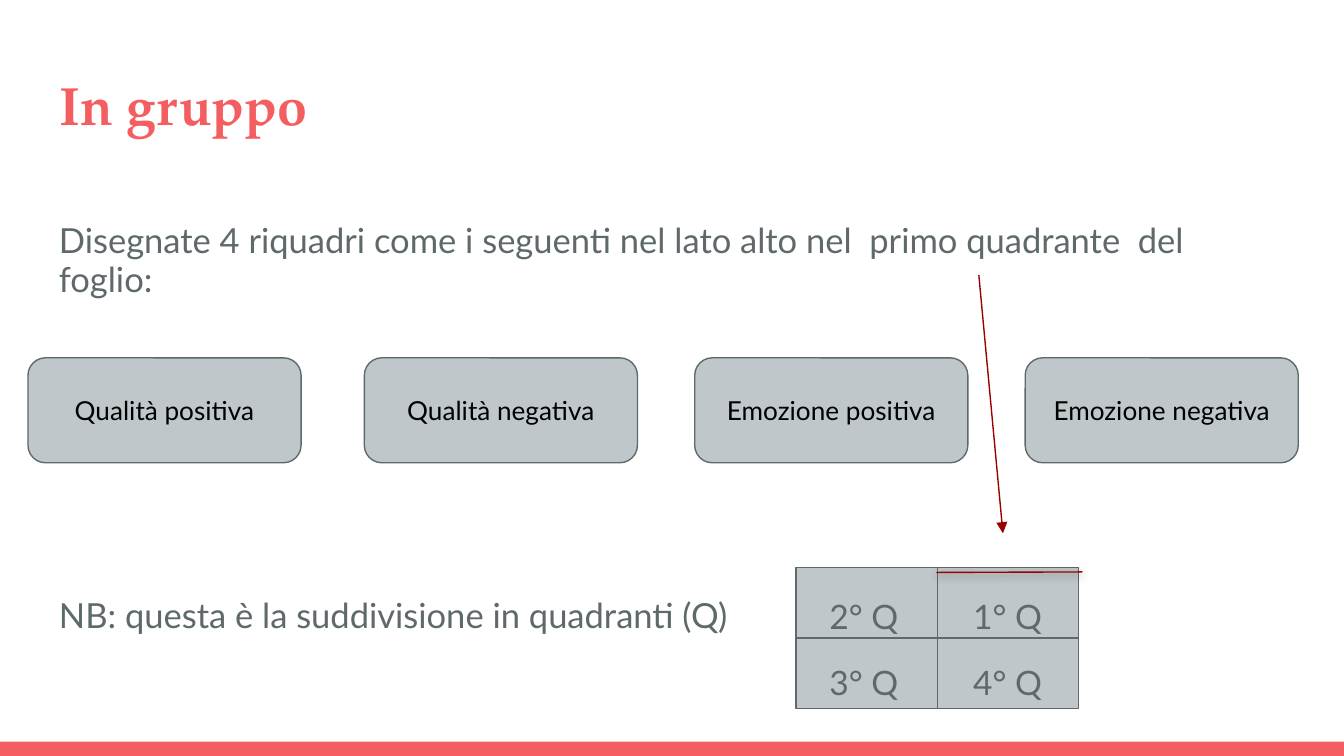
from lxml import etree
from pptx import Presentation
from pptx import util as u
from pptx.dml.color import RGBColor
from pptx.enum import shapes, text
from pptx.oxml.ns import qn

Pt = u.Pt
CORAL = RGBColor(0xF5, 0x5E, 0x61)
SLATE = RGBColor(0x5E, 0x69, 0x6C)
SILVER = RGBColor(0xBF, 0xC7, 0xCA)
DARK_RED = RGBColor(0x99, 0x00, 0x00)
BLACK = RGBColor(0, 0, 0)

TITLE = dict(name="TeX Gyre Pagella", size=Pt(28.8), bold=True)
BODY = dict(name="Lato", size=Pt(18.5))
QUADRANT = dict(name="Lato", size=Pt(18))
LABEL = dict(name="Lato", size=Pt(14))


def place(sp, x, y, w, h):
    sp.left, sp.top, sp.width, sp.height = Pt(x), Pt(y), Pt(w), Pt(h)


def write(sp, content, fmt, color, anchor=text.MSO_ANCHOR.TOP,
          align=text.PP_ALIGN.LEFT, spacing=1.0):
    tf = sp.text_frame
    frame = dict(word_wrap=True, auto_size=text.MSO_AUTO_SIZE.NONE,
                 vertical_anchor=anchor)
    for side in ("left", "top", "right", "bottom"):
        frame["margin_" + side] = Pt(7.2)
    for key, value in frame.items():
        setattr(tf, key, value)
    p = tf.paragraphs[0]
    p.alignment, p.line_spacing = align, spacing
    r = p.add_run()
    r.text = content
    for key, value in fmt.items():
        setattr(r.font, key, value)
    r.font.color.rgb = color


def add_title(s, content):
    sp = s.shapes.title
    place(sp, 24.5, 31, 671, 49)
    write(sp, content, TITLE, CORAL)


def add_text(s, box, content, fmt, spacing=1.0):
    sp = s.shapes.add_textbox(*map(Pt, box))
    write(sp, content, fmt, SLATE, spacing=spacing)


def add_box(s, kind, box, fill, line=None):
    sp = s.shapes.add_shape(kind, *map(Pt, box))
    sp.shadow.inherit = False
    sp.fill.solid()
    sp.fill.fore_color.rgb = fill
    if line is None:
        sp.line.fill.background()
    else:
        sp.line.color.rgb = line
        sp.line.width = Pt(0.75)
    return sp


def add_line(s, ends, color):
    """Add a thin line; return it with its empty effect list."""
    sp = s.shapes.add_connector(shapes.MSO_CONNECTOR.STRAIGHT, *map(Pt, ends))
    sp.line.color.rgb = color
    sp.line.width = Pt(0.75)
    effects = etree.SubElement(sp._element.spPr, qn("a:effectLst"))
    return sp, effects


def add_arrow(s, ends, color):
    sp, _ = add_line(s, ends, color)
    etree.SubElement(sp.line._get_or_add_ln(), qn("a:tailEnd"), type="triangle")


def add_shadowed_line(s, ends, color):
    _, effects = add_line(s, ends, color)
    shadow = etree.SubElement(effects, qn("a:outerShdw"), blurRad=str(Pt(4.5)),
                              dist=str(Pt(1.5)), dir="5400000",
                              algn="bl", rotWithShape="0")
    shade = etree.SubElement(shadow, qn("a:srgbClr"), val=str(BLACK))
    etree.SubElement(shade, qn("a:alpha"), val="50000")


def add_quadrants(s, x, y, w, h):
    add_box(s, shapes.MSO_SHAPE.RECTANGLE, (x, y, w, h), SILVER, SLATE)
    mid_x, mid_y = x + w / 2, y + h / 2
    add_line(s, (x, mid_y, x + w, mid_y), SLATE)
    add_line(s, (mid_x, y, mid_x, y + h), SLATE)
    for row, numbers in enumerate(((2, 1), (3, 4))):
        for col, number in enumerate(numbers):
            box = (x + 10.9 + 77 * col, y + 8 + 35.2 * row, 53.3, 24.5)
            add_text(s, box, f"{number}° Q", QUADRANT)


def main():
    prs = Presentation()
    prs.slide_width, prs.slide_height = Pt(720), Pt(405)
    s = prs.slides.add_slide(prs.slide_layouts[5])

    # Footer bar, title and instruction
    add_box(s, shapes.MSO_SHAPE.RECTANGLE, (0, 397.4, 720, 7.6), CORAL)
    add_title(s, "In gruppo")
    add_text(s, (24.5, 111.6, 671, 49),
             "Disegnate 4 riquadri come i seguenti nel lato alto nel  "
             "primo quadrante  del foglio:", BODY, 0.95)

    # Four labelled boxes
    labels = {"Qualità positiva": 15, "Qualità negativa": 195.2,
              "Emozione positiva": 372.2, "Emozione negativa": 549.2}
    for label, x in labels.items():
        sp = add_box(s, shapes.MSO_SHAPE.ROUNDED_RECTANGLE,
                     (x, 191.7, 146.3, 56.2), SILVER, SLATE)
        write(sp, label, LABEL, BLACK, text.MSO_ANCHOR.MIDDLE,
              text.PP_ALIGN.CENTER)

    # Quadrant diagram with its note
    add_text(s, (24.5, 312.5, 671, 49),
             "NB: questa è la suddivisione in quadranti (Q)", BODY, 0.95)
    add_quadrants(s, 426.4, 304, 151.4, 75.8)

    # Marks pointing to the first quadrant
    add_shadowed_line(s, (501.6, 306.7, 579.8, 306.4), DARK_RED)
    add_arrow(s, (524.4, 147.4, 537.3, 285.7), DARK_RED)

    prs.save("out.pptx")


if __name__ == "__main__":
    main()
